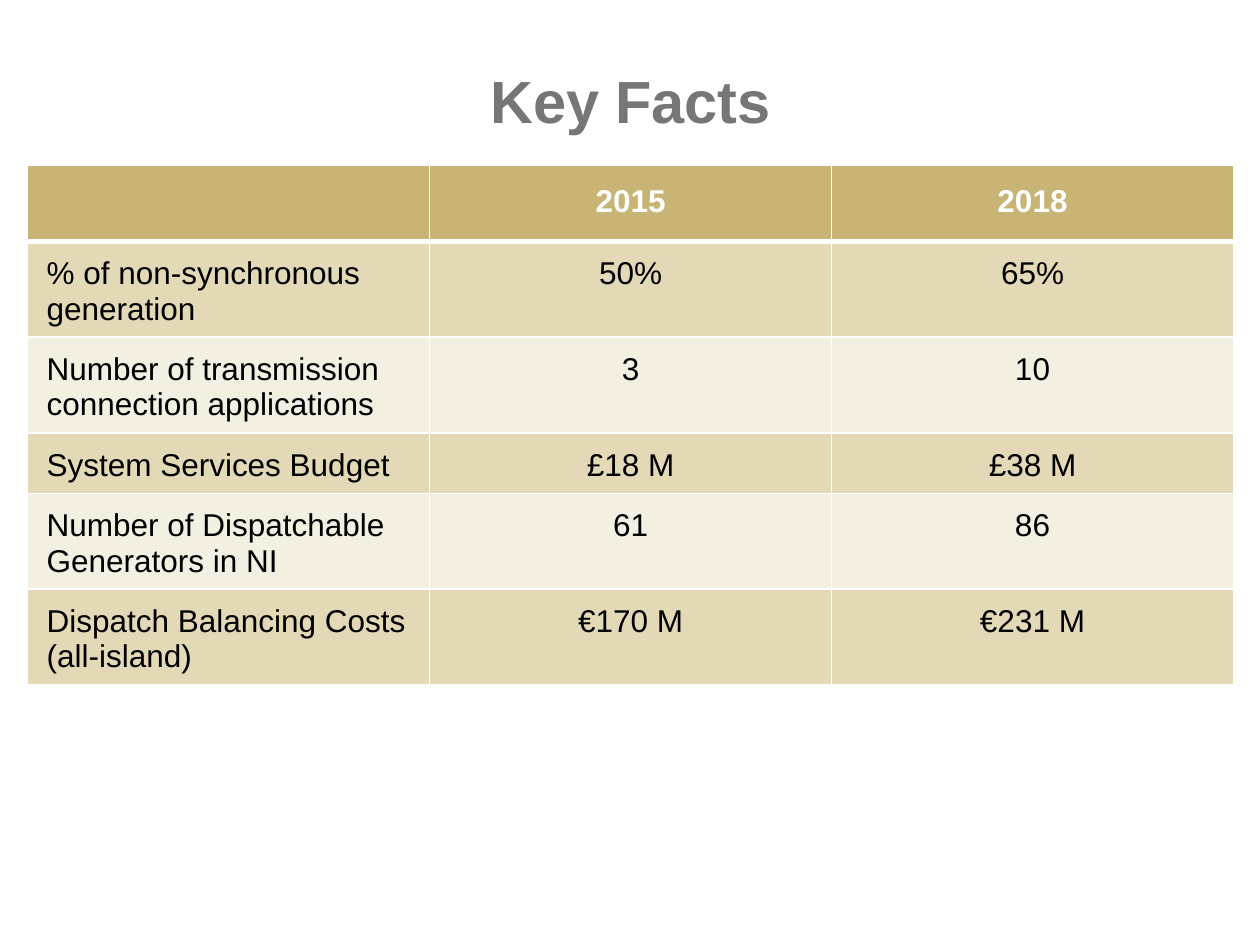
"""Build the Key Facts slide: a title above a three-column comparison table."""
import pptx
import pptx.dml.color
import pptx.enum.text
import pptx.oxml
import pptx.oxml.ns
import pptx.util

Inches, Pt = pptx.util.Inches, pptx.util.Pt
CENTER = pptx.enum.text.PP_ALIGN.CENTER
LEFT = pptx.enum.text.PP_ALIGN.LEFT
MIDDLE = pptx.enum.text.MSO_ANCHOR.MIDDLE


def rgb(value):
    return pptx.dml.color.RGBColor.from_string(value)


def add_run(p, text, size, color, bold):
    r = p.add_run()
    r.text = text
    r.font.name = "Arial"
    r.font.size = Pt(size)
    r.font.bold = bold
    r.font.color.rgb = rgb(color)


rows = [
    ("", "2015", "2018"),
    ("% of non-synchronous generation", "50%", "65%"),
    ("Number of transmission connection applications", "3", "10"),
    ("System Services Budget", "£18 M", "£38 M"),
    ("Number of Dispatchable Generators in NI", "61", "86"),
    ("Dispatch Balancing Costs (all-island)", "€170 M", "€231 M"),
]
heights = [0.57, 0.76, 0.76, 0.47, 0.76, 0.76]

prs = pptx.Presentation()
prs.slide_width, prs.slide_height = Inches(10), Inches(7.5)
slide = prs.slides.add_slide(prs.slide_layouts[5])

title = slide.shapes.title
title.left, title.top = Inches(0.22), Inches(0.27)
title.width, title.height = Inches(9.57), Inches(1.05)
tf = title.text_frame
tf.vertical_anchor = MIDDLE
p = tf.paragraphs[0]
p.alignment = CENTER
add_run(p, "Key Facts", 34, "767676", True)

table = slide.shapes.add_table(
    len(rows), 3, Inches(0.22), Inches(1.31), Inches(9.57), Inches(sum(heights))
).table
for i, (row, height) in enumerate(zip(rows, heights)):
    table.rows[i].height = Inches(height)
    header = i == 0
    fill = "C8B474" if header else ("F3EFE1", "E3D9B7")[i % 2]
    for j, text in enumerate(row):
        cell = table.cell(i, j)
        cell.margin_left = cell.margin_right = Inches(0.15)
        cell.margin_top = Inches(0.15 if header else 0.12)
        cell.margin_bottom = Inches(0.15 if header else 0.08)
        cell.fill.solid()
        cell.fill.fore_color.rgb = rgb(fill)

        p = cell.text_frame.paragraphs[0]
        p.alignment = CENTER if j else LEFT
        p.space_after = Pt(6)
        if text:
            add_run(p, text, 18, "FFFFFF" if header else "000000", header)

        tcPr = cell._tc.get_or_add_tcPr()
        for k, side in enumerate("LRTB"):
            thick = (header and side == "B") or (i == 1 and side == "T")
            tcPr.insert(k, pptx.oxml.parse_xml(
                f'<a:ln{side} {pptx.oxml.ns.nsdecls("a")} w="{Pt(3 if thick else 1)}">'
                f'<a:solidFill><a:srgbClr val="FFFFFF"/></a:solidFill></a:ln{side}>'
            ))

prs.save("out.pptx")
